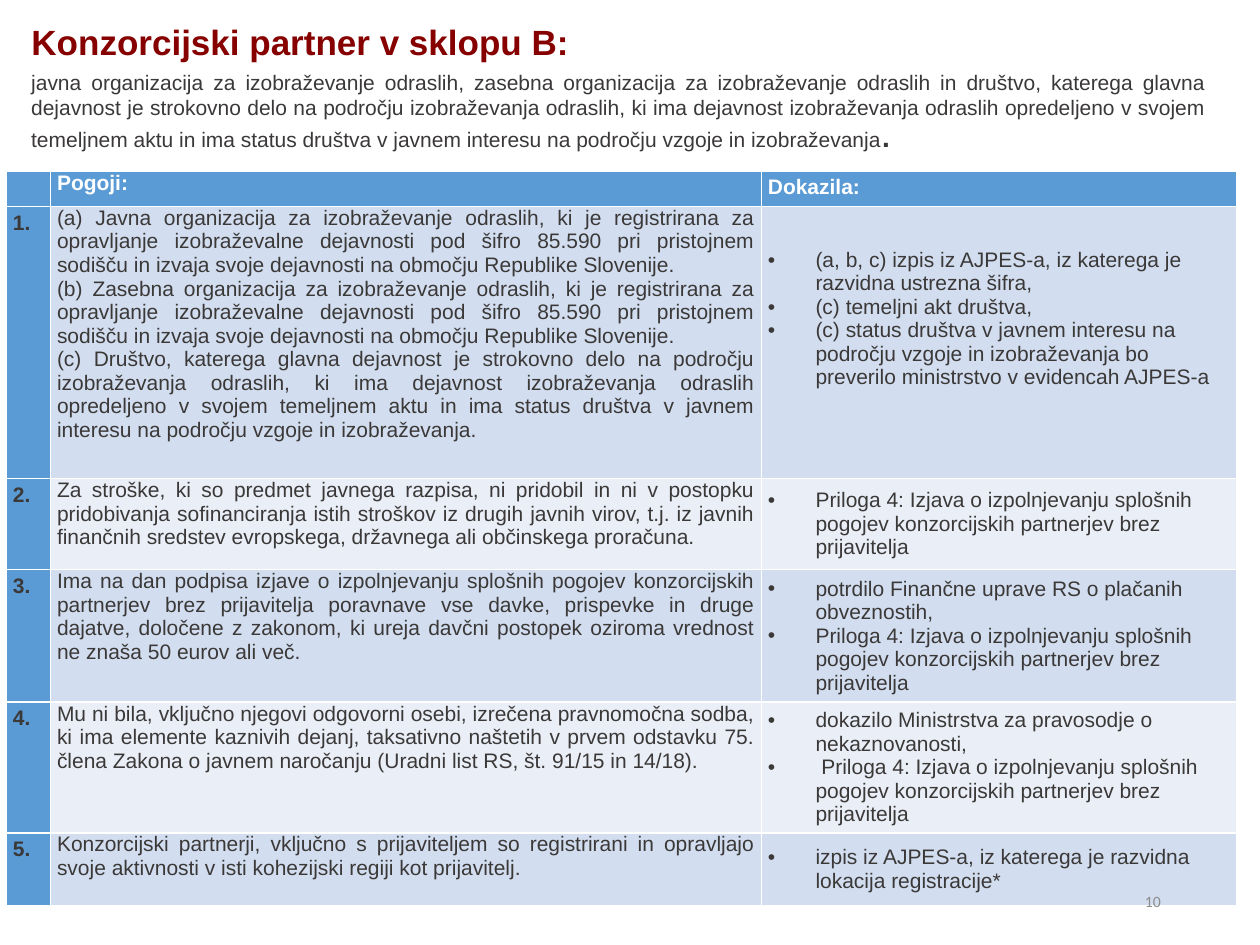
from lxml import etree
from pptx import Presentation
from pptx.dml.color import RGBColor
from pptx.enum import text
from pptx.oxml import ns
from pptx.util import Cm, Pt

WHITE = RGBColor(0xFF, 0xFF, 0xFF)
MAROON = RGBColor(0x86, 0x00, 0x00)
INK = RGBColor(0x3B, 0x38, 0x38)
GRAY = RGBColor(0x8C, 0x8C, 0x8C)
BLUE = RGBColor(0x5B, 0x9B, 0xD5)
BANDS = (RGBColor(0xD2, 0xDE, 0xEF), RGBColor(0xEA, 0xEF, 0xF7))

JUSTIFY = text.PP_ALIGN.JUSTIFY
TOP, MIDDLE = text.MSO_ANCHOR.TOP, text.MSO_ANCHOR.MIDDLE

HEADING = "Konzorcijski partner v sklopu B:"
INTRO = (
    "javna organizacija za izobraževanje odraslih, zasebna organizacija za izobraževanje "
    "odraslih in društvo, katerega glavna dejavnost je strokovno delo na področju "
    "izobraževanja odraslih, ki ima dejavnost izobraževanja odraslih opredeljeno v svojem "
    "temeljnem aktu in ima status društva v javnem interesu na področju vzgoje in izobraževanja"
)
REGISTERED = (
    "organizacija za izobraževanje odraslih, ki je registrirana za opravljanje izobraževalne "
    "dejavnosti pod šifro 85.590 pri pristojnem sodišču in izvaja svoje dejavnosti na območju "
    "Republike Slovenije."
)
ANNEX = ("Priloga 4: Izjava o izpolnjevanju splošnih pogojev konzorcijskih partnerjev "
         "brez prijavitelja")

# (row height in cm, conditions, proofs)
REQUIREMENTS = [
    (5.49,
     ["(a) Javna " + REGISTERED,
      "(b) Zasebna " + REGISTERED,
      "(c) Društvo, katerega glavna dejavnost je strokovno delo na področju izobraževanja "
      "odraslih, ki ima dejavnost izobraževanja odraslih opredeljeno v svojem temeljnem aktu "
      "in ima status društva v javnem interesu na področju vzgoje in izobraževanja."],
     ["(a, b, c) izpis iz AJPES-a, iz katerega je razvidna ustrezna šifra,",
      "(c) temeljni akt društva,",
      "(c) status društva v javnem interesu na področju vzgoje in izobraževanja bo preverilo "
      "ministrstvo v evidencah AJPES-a"]),
    (1.83,
     ["Za stroške, ki so predmet javnega razpisa, ni pridobil in ni v postopku pridobivanja "
      "sofinanciranja istih stroškov iz drugih javnih virov, t.j. iz javnih finančnih sredstev "
      "evropskega, državnega ali občinskega proračuna."],
     [ANNEX]),
    (2.67,
     ["Ima na dan podpisa izjave o izpolnjevanju splošnih pogojev konzorcijskih partnerjev brez "
      "prijavitelja poravnave vse davke, prispevke in druge dajatve, določene z zakonom, ki "
      "ureja davčni postopek oziroma vrednost ne znaša 50 eurov ali več."],
     ["potrdilo Finančne uprave RS o plačanih obveznostih,", ANNEX]),
    (2.64,
     ["Mu ni bila, vključno njegovi odgovorni osebi, izrečena pravnomočna sodba, ki ima elemente "
      "kaznivih dejanj, taksativno naštetih v prvem odstavku 75. člena Zakona o javnem naročanju "
      "(Uradni list RS, št. 91/15 in 14/18)."],
     ["dokazilo Ministrstva za pravosodje o nekaznovanosti,", " " + ANNEX]),
    (1.47,
     ["Konzorcijski partnerji, vključno s prijaviteljem so registrirani in opravljajo svoje "
      "aktivnosti v isti kohezijski regiji kot prijavitelj."],
     ["izpis iz AJPES-a, iz katerega je razvidna lokacija registracije*"]),
]


def style(part, size, color, bold=False, face="Arial"):
    """Format the font of a run or paragraph."""
    part.font.name, part.font.size, part.font.bold = face, Pt(size), bold
    part.font.color.rgb = color


def add_bullet(paragraph):
    properties = paragraph._p.get_or_add_pPr()
    properties.set("marL", str(Cm(0.96)))
    properties.set("indent", str(Cm(-0.96)))
    etree.SubElement(properties, ns.qn("a:buFont")).set("typeface", "Arial")
    etree.SubElement(properties, ns.qn("a:buChar")).set("char", "•")


def fill_cell(cell, lines, fill, color=INK, bold=False, bullets=False, spacing=None):
    cell.fill.solid()
    cell.fill.fore_color.rgb = fill
    cell.margin_left = cell.margin_right = Cm(0.13)
    cell.margin_top = cell.margin_bottom = 0
    cell.vertical_anchor = MIDDLE if bullets else TOP
    cell.text_frame.text = "\n".join(lines)
    for paragraph in cell.text_frame.paragraphs:
        if bullets:
            add_bullet(paragraph)
        else:
            paragraph.alignment = JUSTIFY
        if spacing:
            paragraph.line_spacing = spacing
        style(paragraph, 12, color, bold)
        for run in paragraph.runs:
            style(run, 12, color, bold)


def add_heading(slide, left, top, width):
    title = slide.shapes.title
    title.left, title.top, title.width, title.height = left, top, width, Cm(1.1)
    frame = title.text_frame
    frame.text = HEADING
    frame.vertical_anchor = TOP
    frame.auto_size = text.MSO_AUTO_SIZE.NONE
    frame.paragraphs[0].alignment = JUSTIFY
    style(frame.paragraphs[0].runs[0], 20, MAROON, bold=True)

    intro = slide.shapes.add_textbox(left, top + Cm(0.99), width, Cm(1.8)).text_frame
    intro.word_wrap = True
    intro.text = INTRO
    paragraph = intro.paragraphs[0]
    paragraph.alignment = JUSTIFY
    style(paragraph.runs[0], 12, INK)
    stop = paragraph.add_run()
    stop.text = "."
    style(stop, 20, INK, bold=True)
    stop.font.size = Pt(16)


def add_requirements(slide, left, top, widths):
    heights = [0.71] + [height for height, _, _ in REQUIREMENTS]
    table = slide.shapes.add_table(len(heights), len(widths), left, top,
                                   Cm(sum(widths)), Cm(sum(heights))).table
    for column, width in zip(table.columns, widths):
        column.width = Cm(width)
    for row, height in zip(table.rows, heights):
        row.height = Cm(height)

    for column, (label, spacing) in enumerate([("", None), ("Pogoji:", None), ("Dokazila:", 1.2)]):
        fill_cell(table.cell(0, column), [label], BLUE, WHITE, bold=True, spacing=spacing)
    for number, (_, conditions, proofs) in enumerate(REQUIREMENTS, 1):
        band = BANDS[(number - 1) % 2]
        fill_cell(table.cell(number, 0), [f"{number}."], BLUE, bold=True, spacing=1.2)
        fill_cell(table.cell(number, 1), conditions, band)
        fill_cell(table.cell(number, 2), proofs, band, bullets=True)
    # The first proofs sit above the middle of their tall row
    table.cell(1, 2).margin_bottom = Cm(0.96)


def add_page_number(slide, left, top, width, height):
    frame = slide.shapes.add_textbox(left, top, width, height).text_frame
    frame.word_wrap = True
    frame.vertical_anchor = MIDDLE
    frame.text = "10"
    frame.paragraphs[0].alignment = text.PP_ALIGN.RIGHT
    style(frame.paragraphs[0].runs[0], 9, GRAY, face="Calibri")


def main():
    deck = Presentation()
    deck.slide_width, deck.slide_height = Cm(25.4), Cm(19.05)
    slide = deck.slides.add_slide(deck.slide_layouts.get_by_name("Title Only"))
    add_heading(slide, Cm(0.38), Cm(0.28), Cm(24.2))
    add_requirements(slide, Cm(0.13), Cm(3.45), [0.89, 14.33, 9.58])
    add_page_number(slide, Cm(17.93), Cm(17.65), Cm(5.72), Cm(1.02))
    deck.save("out.pptx")


if __name__ == "__main__":
    main()
